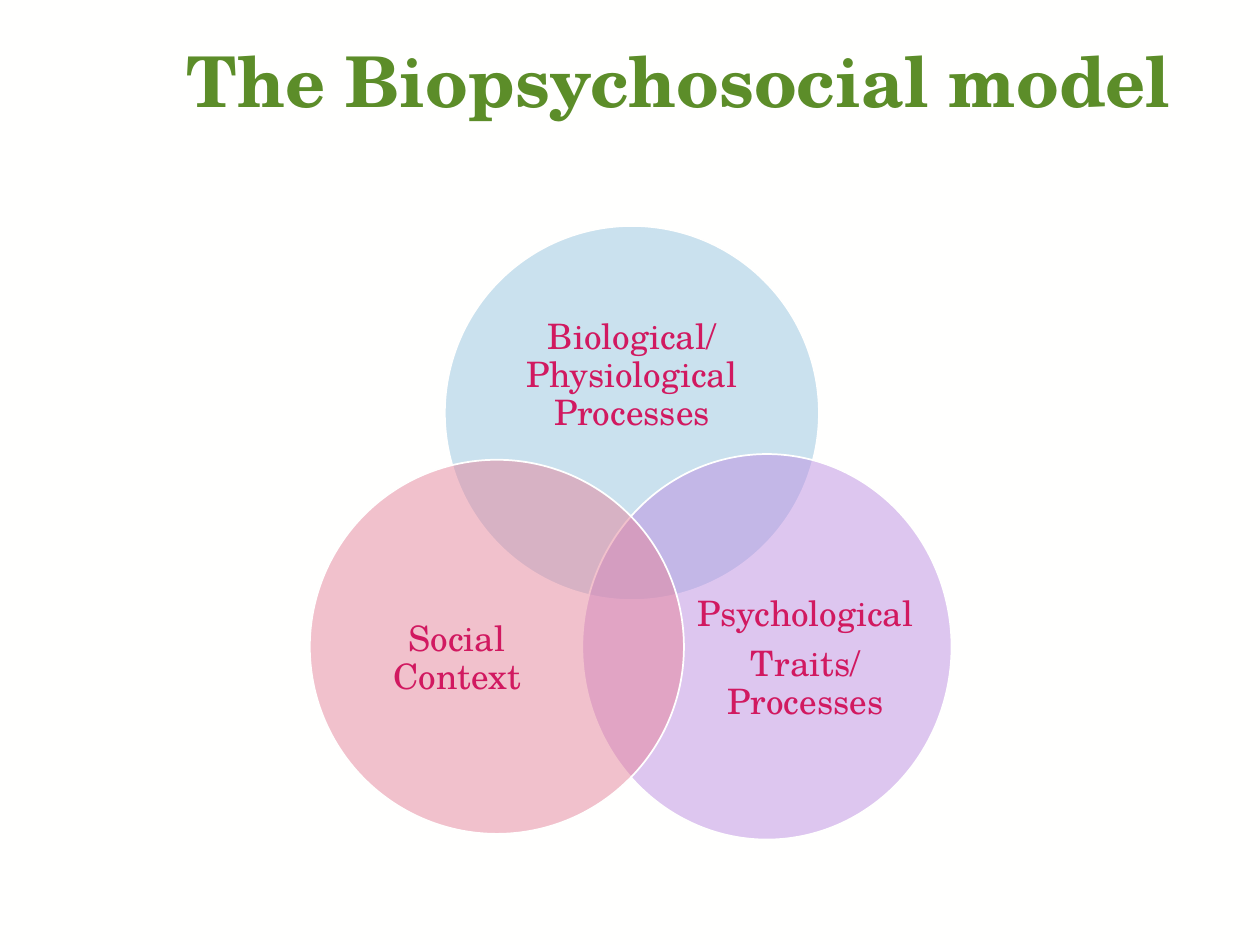
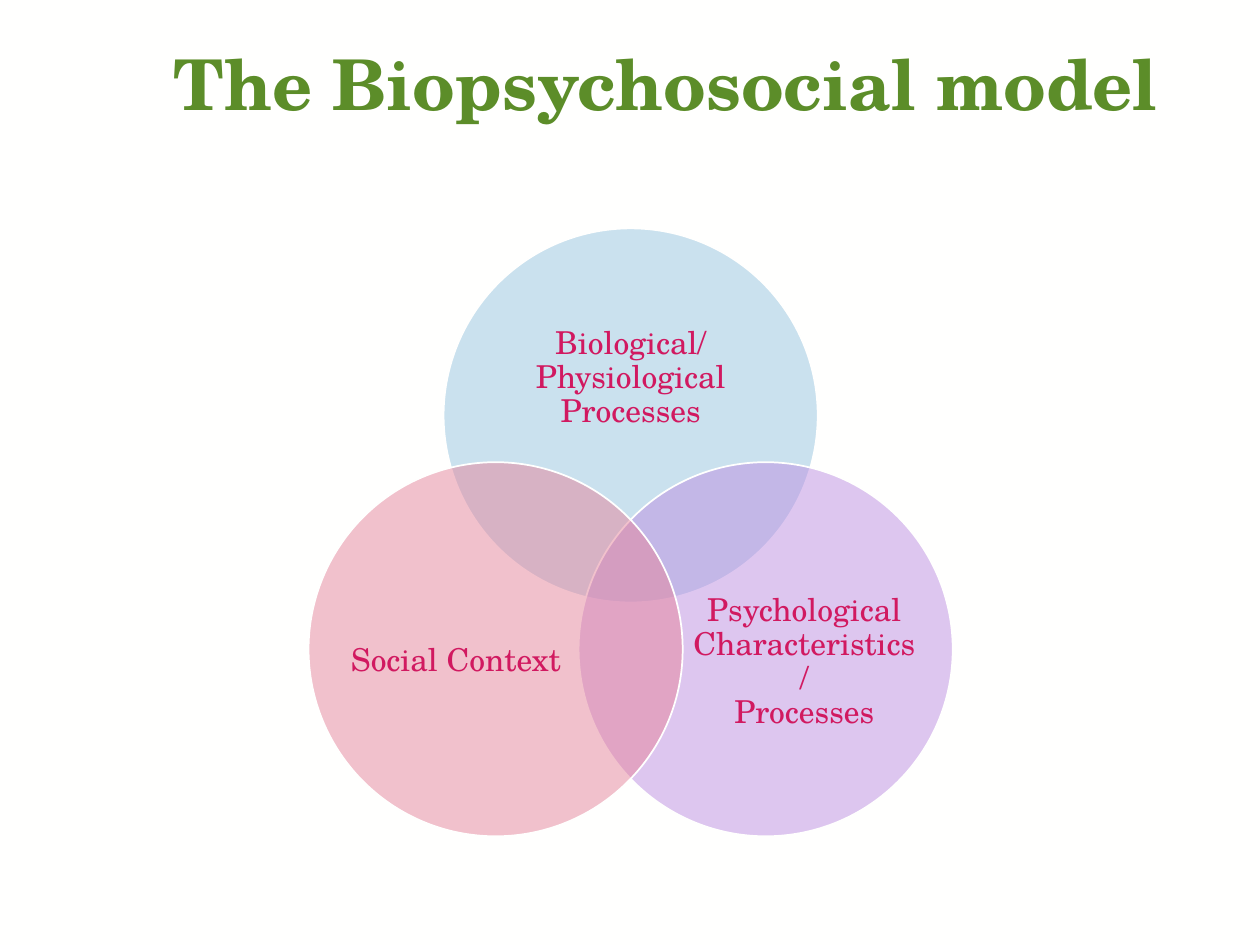
from dataclasses import dataclass
from math import cos, radians, sin

from lxml import etree
from pptx import Presentation
from pptx.dml.color import RGBColor
from pptx.enum.shapes import MSO_SHAPE
from pptx.enum.text import MSO_ANCHOR as ANCHOR, MSO_AUTO_SIZE as AUTO_SIZE, PP_ALIGN as ALIGN
from pptx.oxml.ns import qn
from pptx.util import Pt

# Content: the label paragraphs run top, right, left; "\n" is a line break
TITLE = "The Biopsychosocial model"
BIOLOGICAL = ["Biological/\nPhysiological Processes"]
SOCIAL = ["Social Context"]
SLIDES = [
    dict(align=ALIGN.CENTER, title_inset=1.6, size=20, center=(361.1, 325.1),
         labels=[BIOLOGICAL, ["Psychological", "Traits/\nProcesses"], SOCIAL],
         right_circle=(211, 220.3)),
    dict(align=ALIGN.LEFT, title_inset=3.6, size=18, center=(360.4, 326.5),
         labels=[BIOLOGICAL, ["Psychological Characteristics/\nProcesses"], SOCIAL],
         right_circle=(213.8, 213.8)),
]


@dataclass(frozen=True)
class Theme:
    font: str = "TeX Gyre Schola"
    background: str = "FFFFFE"
    title: str = "5C8D29"
    label: str = "D11960"
    circles: tuple = ("97C5DF", "BD8EE2", "E5849B")
    opacity: int = 50
    title_size: int = 40


THEME = Theme()

# Geometry in points
TITLE_BOX = (92.2, 25.2, 591.1, 90)
DIAMETER = 213.8
ORBIT = DIAMETER * 5 / 12          # circle centres from the diagram centre
ANGLES = (-90, 30, 150)
LABEL_SHIFTS = ((0, -21.2), (22, 7.2), (-22.7, 7))
LABEL_SIZES = ((157, 96.5), (128.2, 118), (128.2, 117.4))


def rgb(color):
    return RGBColor.from_string(color)


def centered(x, y, width, height):
    return [Pt(v) for v in (x - width / 2, y - height / 2, width, height)]


def write(tf, paragraphs, *, size, color, bold=False, align=ALIGN.CENTER,
          anchor=ANCHOR.MIDDLE, after=0):
    tf.word_wrap = True
    tf.auto_size = AUTO_SIZE.NONE
    tf.vertical_anchor = anchor
    for i, text in enumerate(paragraphs):
        p = tf.add_paragraph() if i else tf.paragraphs[0]
        p.alignment, p.line_spacing = align, 0.9
        p.space_before, p.space_after = Pt(0), Pt(after)
        for j, line in enumerate(text.split("\n")):
            if j:
                p.add_line_break()
            r = p.add_run()
            r.text = line
            r.font.name, r.font.size, r.font.bold = THEME.font, Pt(size), bold
            r.font.color.rgb = rgb(color)


def add_title(s, align, inset):
    title = s.shapes.title
    title.left, title.top, title.width, title.height = map(Pt, TITLE_BOX)
    title.text_frame.margin_top = Pt(inset)
    write(title.text_frame, [TITLE], size=THEME.title_size, color=THEME.title,
          bold=True, align=align, anchor=ANCHOR.TOP)


def add_circle(group, box, color):
    sp = group.shapes.add_shape(MSO_SHAPE.OVAL, *box)
    sp.shadow.inherit = False
    sp.fill.solid()
    sp.fill.fore_color.rgb = rgb(color)
    fill = sp.fill._xPr.find(qn("a:solidFill"))
    etree.SubElement(fill[0], qn("a:alpha"), val=str(THEME.opacity * 1000))
    sp.line.color.rgb = rgb(THEME.background)
    sp.line.width = Pt(1)


def add_label(group, box, paragraphs, size):
    tf = group.shapes.add_textbox(*box).text_frame
    tf.margin_left = tf.margin_top = tf.margin_right = tf.margin_bottom = 0
    write(tf, paragraphs, size=size, color=THEME.label, after=round(size * 0.35, 1))


def add_venn(s, center, labels, size, right_circle):
    group = s.shapes.add_group_shape()
    circle_sizes = ((DIAMETER, DIAMETER), right_circle, (DIAMETER, DIAMETER))
    for angle, circle, color, shift, label_size, label in zip(
            ANGLES, circle_sizes, THEME.circles, LABEL_SHIFTS, LABEL_SIZES, labels):
        x = center[0] + ORBIT * cos(radians(angle))
        y = center[1] + ORBIT * sin(radians(angle))
        add_circle(group, centered(x, y, *circle), color)
        add_label(group, centered(x + shift[0], y + shift[1], *label_size), label, size)


def main():
    prs = Presentation()
    prs.slide_width, prs.slide_height = Pt(720), Pt(540)
    for item in SLIDES:
        s = prs.slides.add_slide(prs.slide_layouts[5])
        s.background.fill.solid()
        s.background.fill.fore_color.rgb = rgb(THEME.background)
        add_title(s, item["align"], item["title_inset"])
        add_venn(s, item["center"], item["labels"], item["size"], item["right_circle"])
    prs.save("out.pptx")


if __name__ == "__main__":
    main()
